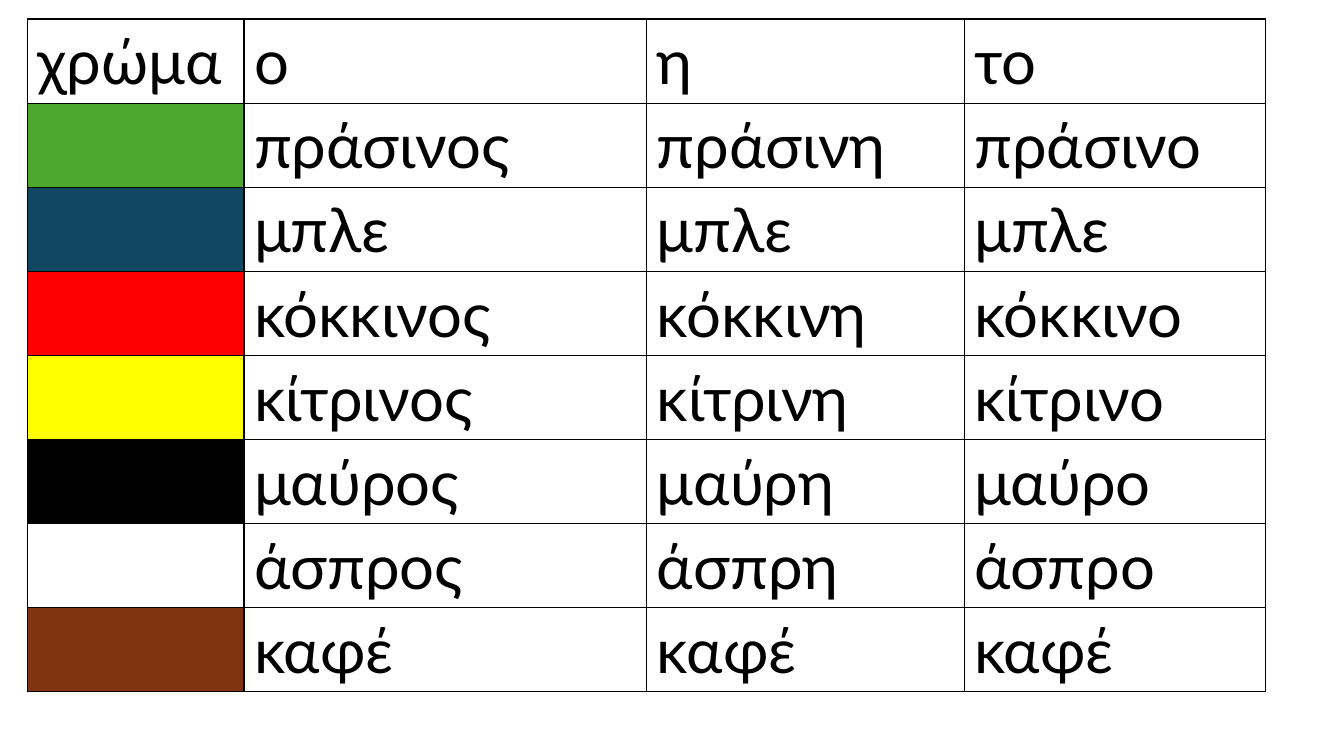
from dataclasses import dataclass

from lxml.etree import SubElement
from pptx import Presentation
from pptx.dml.color import RGBColor as Rgb
from pptx.oxml.ns import qn
from pptx.util import Cm, Pt


@dataclass(frozen=True)
class Theme:
    font: str = "Lato"
    size: int = 44
    text: str = "000000"
    border: str = "000000"
    border_width: int = 1
    green: str = "4EA72E"
    blue: str = "104862"
    red: str = "FF0000"
    yellow: str = "FFFF00"
    black: str = "000000"
    brown: str = "80350E"


THEME = Theme()
HEADINGS = ("χρώμα", "ο", "η", "το")
# Swatch colour (None leaves the cell unfilled), then the three gender forms.
COLOUR_WORDS = (
    (THEME.green, "πράσινος", "πράσινη", "πράσινο"),
    (THEME.blue, "μπλε", "μπλε", "μπλε"),
    (THEME.red, "κόκκινος", "κόκκινη", "κόκκινο"),
    (THEME.yellow, "κίτρινος", "κίτρινη", "κίτρινο"),
    (THEME.black, "μαύρος", "μαύρη", "μαύρο"),
    (None, "άσπρος", "άσπρη", "άσπρο"),
    (THEME.brown, "καφέ", "καφέ", "καφέ"),
)
COLUMN_SHARES = (2.15, 4, 3.15, 2.99)


def style_cell(cell, fill=None):
    """Draw the four borders, then the fill."""
    properties = cell._tc.get_or_add_tcPr()
    for side in ("a:lnL", "a:lnR", "a:lnT", "a:lnB"):
        line = SubElement(properties, qn(side), w=str(Pt(THEME.border_width)))
        solid = SubElement(line, qn("a:solidFill"))
        SubElement(solid, qn("a:srgbClr"), val=THEME.border)
    if fill:
        cell.fill.solid()
        cell.fill.fore_color.rgb = Rgb.from_string(fill)
    else:
        cell.fill.background()


def write_word(cell, word):
    run = cell.text_frame.paragraphs[0].add_run()
    run.text = word
    run.font.name = THEME.font
    run.font.size = Pt(THEME.size)
    run.font.bold = False
    run.font.color.rgb = Rgb.from_string(THEME.text)


def add_colour_table(page, left, top, width, height):
    row_count = len(COLOUR_WORDS) + 1
    table = page.shapes.add_table(
        row_count, len(HEADINGS), left, top, width, height).table
    table.first_row = table.horz_banding = False
    for column, share in zip(table.columns, COLUMN_SHARES):
        column.width = int(width * share / sum(COLUMN_SHARES))

    for cell, heading in zip(table.rows[0].cells, HEADINGS):
        style_cell(cell)
        write_word(cell, heading)
    for row_index, (swatch, *forms) in enumerate(COLOUR_WORDS, start=1):
        swatch_cell, *form_cells = table.rows[row_index].cells
        style_cell(swatch_cell, swatch)
        for cell, form in zip(form_cells, forms):
            style_cell(cell)
            write_word(cell, form)


def main():
    deck = Presentation()
    deck.slide_width, deck.slide_height = Cm(33.87), Cm(19.05)
    page = deck.slides.add_slide(deck.slide_layouts[6])
    add_colour_table(page, Cm(0.69), Cm(0.48), Cm(31.2), Cm(16.93))
    deck.save("out.pptx")


if __name__ == "__main__":
    main()
